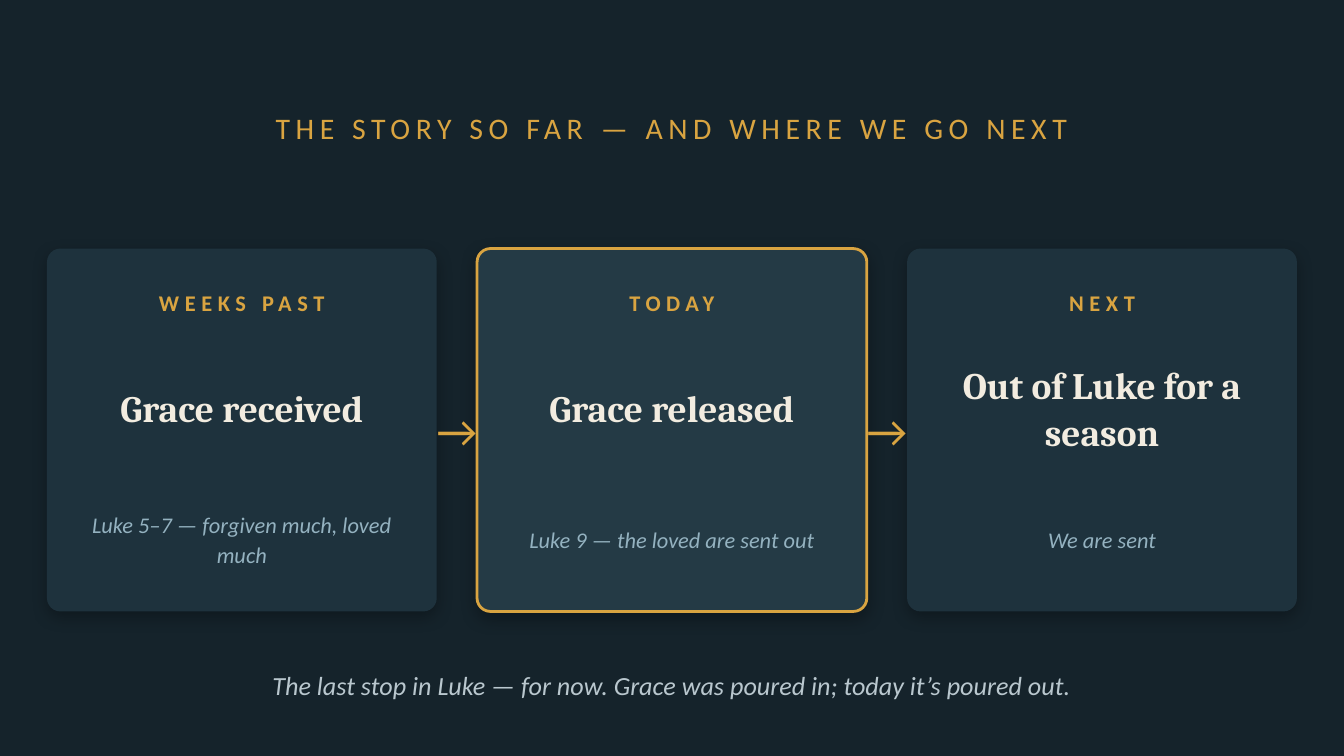
from lxml import etree
from pptx import Presentation, util as u
from pptx.dml.color import RGBColor
from pptx.enum import shapes, text
from pptx.oxml import ns

PX = u.Inches(1) // 100
BACKGROUND = RGBColor(0x15, 0x23, 0x2B)
CARD = RGBColor(0x1E, 0x32, 0x3D)
CARD_TODAY = RGBColor(0x24, 0x3A, 0x45)
GOLD = RGBColor(0xD9, 0xA4, 0x41)
CREAM = RGBColor(0xF2, 0xEC, 0xE0)
MUTED = RGBColor(0x94, 0xB2, 0xC0)
PALE = RGBColor(0xB9, 0xC7, 0xCE)


def write(sp, words, size, color, font="Calibri", bold=False, italic=False,
          tracking=0, spacing=None):
    tf = sp.text_frame
    tf.text = words
    tf.word_wrap = True
    tf.auto_size = text.MSO_AUTO_SIZE.NONE
    tf.vertical_anchor = text.MSO_ANCHOR.MIDDLE
    p = tf.paragraphs[0]
    p.alignment = text.PP_ALIGN.CENTER
    p.line_spacing = spacing
    r = p.runs[0]
    r.font.name = font
    r.font.size = u.Pt(size)
    r.font.bold = bold
    r.font.italic = italic
    r.font.color.rgb = color
    if tracking:
        r.font._element.set("spc", str(tracking * 100))


def add_text(x, y, w, h, words, size, color, **style):
    sp = s.shapes.add_textbox(x * PX, y * PX, w * PX, h * PX)
    write(sp, words, size, color, **style)


prs = Presentation()
prs.slide_width = 1000 * PX
prs.slide_height = prs.slide_width * 9 // 16
s = prs.slides.add_slide(prs.slide_layouts[5])
s.background.fill.solid()
s.background.fill.fore_color.rgb = BACKGROUND

title = s.shapes.title
title.left, title.top, title.width, title.height = 50 * PX, 70 * PX, 900 * PX, 50 * PX
write(title, "THE STORY SO FAR — AND WHERE WE GO NEXT", 16, GOLD, tracking=3)

cards = [
    ("WEEKS PAST", "Grace received", "Luke 5–7 — forgiven much, loved much"),
    ("TODAY", "Grace released", "Luke 9 — the loved are sent out"),
    ("NEXT", "Out of Luke for a season", "We are sent"),
]
LEFT, TOP, WIDTH, HEIGHT, STEP = 35, 185, 290, 270, 320

for i, (label, heading, note) in enumerate(cards):
    x = LEFT + i * STEP
    today = label == "TODAY"
    card = s.shapes.add_shape(shapes.MSO_SHAPE.ROUNDED_RECTANGLE,
                              x * PX, TOP * PX, WIDTH * PX, HEIGHT * PX)
    card.adjustments[0] = 0.037
    card.fill.solid()
    card.fill.fore_color.rgb = CARD_TODAY if today else CARD
    if today:
        card.line.color.rgb = GOLD
        card.line.width = u.Pt(1.5)
    else:
        card.line.fill.background()
    card.shadow.inherit = False
    effects = card._element.spPr.find(ns.qn("a:effectLst"))
    shadow = etree.SubElement(effects, ns.qn("a:outerShdw"), blurRad=str(u.Pt(9)),
                              dist=str(u.Pt(3)), dir="5400000",
                              algn="bl", rotWithShape="0")
    black = etree.SubElement(shadow, ns.qn("a:srgbClr"), val="000000")
    etree.SubElement(black, ns.qn("a:alpha"), val="30000")

    add_text(x + 15, 205, 260, 40, label, 12, GOLD, bold=True, tracking=3)
    add_text(x + 15, 250, 260, 105, heading, 20, CREAM, font="Cambria", bold=True, spacing=1.05)
    add_text(x + 20, 360, 250, 80, note, 12, MUTED, italic=True, spacing=1.12)

for i in range(len(cards) - 1):
    add_text(LEFT + i * STEP + WIDTH - 10, TOP, 50, HEIGHT, "→", 24, GOLD)

add_text(50, 485, 900, 50,
         "The last stop in Luke — for now. Grace was poured in; today it’s poured out.",
         14, PALE, italic=True)

prs.save("out.pptx")
